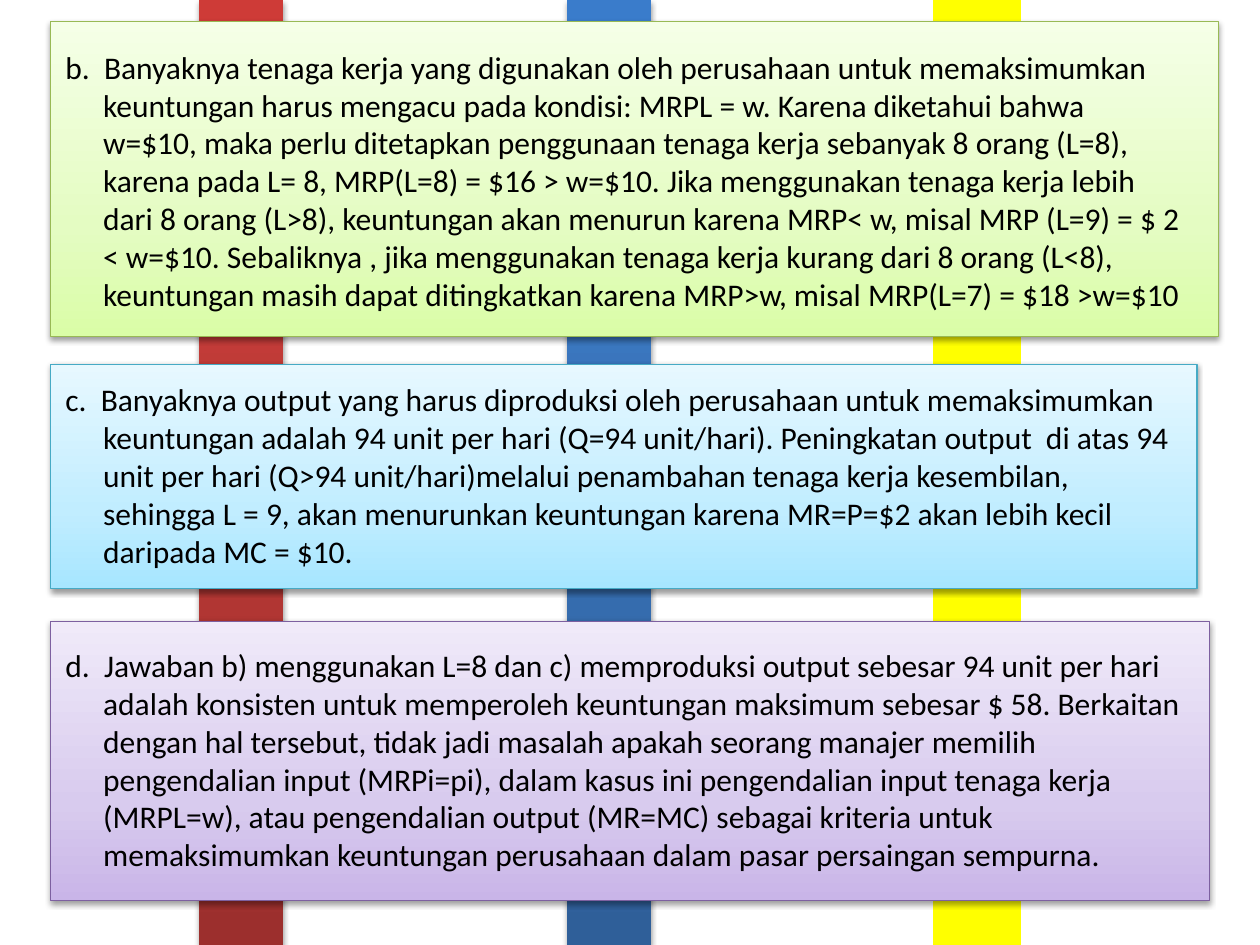
from lxml import etree
from pptx import Presentation
from pptx.dml.color import RGBColor
from pptx.enum.shapes import MSO_SHAPE
from pptx.enum.text import MSO_AUTO_SIZE
from pptx.oxml.ns import qn
from pptx.util import Inches, Pt

RECT = MSO_SHAPE.RECTANGLE
GROW = MSO_AUTO_SIZE.SHAPE_TO_FIT_TEXT
BLANK = 6

WIDTH, HEIGHT = 10, 7.5
STRIPE_LEFT, STRIPE_PITCH, STRIPE_WIDTH = 1.58, 2.92, 0.67
PANEL_LEFT = 0.4
TEXT_LEFT, TEXT_WIDTH = 0.42, 9.08
HANGING = 0.3


class Theme:
    FONT = {"name": "Calibri", "size": Pt(18)}
    TEXT = "000000"
    PANEL_LINE = 0.75
    STRIPE_LINE = 2
    # opacity in percent, distance in points
    STRIPE_SHADOW = (35, 1.8)
    PANEL_SHADOW = (38, 1.6)
    SHADOW_BLUR = 3.1
    STRIPE_STOPS = (0, 80, 100)
    PANEL_STOPS = (0, 35, 100)
    RED = ("9C2F2D", "CB3E3A", "CE3B37")
    BLUE = ("2F5F99", "3D7CC7", "3A7CCB")
    YELLOW = "FFFF00"
    GREEN_PANEL = ("DAFDA7", "E4FCC2", "F5FFE7")
    AQUA_PANEL = ("A7E6FF", "C1EDFF", "E7F8FF")
    PURPLE_PANEL = ("C9B5E8", "D8CBEE", "F0EAF9")
    GREEN_LINE, AQUA_LINE, PURPLE_LINE = "98B955", "46AAC5", "7D60A0"


# (panel top, width, height), (text top, height), gradient, line colour, answer
ANSWERS = [
    ((0.17, 9.27, 2.5), (0.33, 2.22), Theme.GREEN_PANEL, Theme.GREEN_LINE,
     "b.  Banyaknya tenaga kerja yang digunakan oleh perusahaan untuk "
     "memaksimumkan keuntungan harus mengacu pada kondisi: MRPL = w. Karena "
     "diketahui bahwa w=$10, maka perlu ditetapkan penggunaan tenaga kerja "
     "sebanyak 8 orang (L=8), karena pada L= 8, MRP(L=8) = $16 > w=$10. Jika "
     "menggunakan tenaga kerja lebih dari 8 orang (L>8), keuntungan akan "
     "menurun karena MRP< w, misal MRP (L=9) = $ 2 < w=$10. Sebaliknya , jika "
     "menggunakan tenaga kerja kurang dari 8 orang (L<8), keuntungan masih "
     "dapat ditingkatkan karena MRP>w, misal MRP(L=7) = $18 >w=$10"),
    ((2.89, 9.1, 1.78), (2.97, 1.62), Theme.AQUA_PANEL, Theme.AQUA_LINE,
     "c.  Banyaknya output yang harus diproduksi oleh perusahaan untuk "
     "memaksimumkan keuntungan adalah 94 unit per hari (Q=94 unit/hari). "
     "Peningkatan output  di atas 94 unit per hari (Q>94 unit/hari)melalui "
     "penambahan tenaga kerja kesembilan, sehingga L = 9, akan menurunkan "
     "keuntungan karena MR=P=$2 akan lebih kecil daripada MC = $10."),
    ((4.93, 9.2, 2.22), (5.08, 1.92), Theme.PURPLE_PANEL, Theme.PURPLE_LINE,
     "d.  Jawaban b) menggunakan L=8 dan c) memproduksi output sebesar 94 unit "
     "per hari adalah konsisten untuk memperoleh keuntungan maksimum sebesar "
     "$ 58. Berkaitan dengan hal tersebut, tidak jadi masalah apakah seorang "
     "manajer memilih pengendalian input (MRPi=pi), dalam kasus ini "
     "pengendalian input tenaga kerja (MRPL=w), atau pengendalian output "
     "(MR=MC) sebagai kriteria untuk memaksimumkan keuntungan perusahaan "
     "dalam pasar persaingan sempurna."),
]


def add_color(parent, color):
    return etree.SubElement(parent, qn("a:srgbClr"), val=color)


def fill_gradient(sp, stops, colors):
    """Fill upwards, the first colour at the bottom edge."""
    sp.fill.gradient()
    sp.fill.gradient_angle = 90
    stop_list = next(sp._element.spPr.iter(qn("a:gsLst")))
    for old in list(stop_list):
        stop_list.remove(old)
    for stop, color in zip(stops, colors):
        add_color(etree.SubElement(stop_list, qn("a:gs"), pos=str(stop * 1000)), color)


def add_shadow(sp, opacity, distance):
    effects = sp._element.spPr.find(qn("a:effectLst"))
    shadow = etree.SubElement(
        effects, qn("a:outerShdw"), blurRad=str(Pt(Theme.SHADOW_BLUR)),
        dist=str(Pt(distance)), dir="5400000", rotWithShape="0")
    etree.SubElement(add_color(shadow, Theme.TEXT), qn("a:alpha"),
                     val=str(opacity * 1000))


def add_rect(slide, box, line=None, line_width=0):
    sp = slide.shapes.add_shape(RECT, *map(Inches, box))
    sp.shadow.inherit = False
    if line:
        sp.line.color.rgb = RGBColor.from_string(line)
        sp.line.width = Pt(line_width)
    else:
        sp.line.fill.background()
    return sp


def add_stripe(slide, column, colors):
    """Draw a full-height stripe: one colour is flat, several are a gradient."""
    box = (STRIPE_LEFT + column * STRIPE_PITCH, 0, STRIPE_WIDTH, HEIGHT)
    if isinstance(colors, str):
        sp = add_rect(slide, box, colors, Theme.STRIPE_LINE)
        sp.fill.solid()
        sp.fill.fore_color.rgb = RGBColor.from_string(colors)
    else:
        sp = add_rect(slide, box)
        fill_gradient(sp, Theme.STRIPE_STOPS, colors)
        add_shadow(sp, *Theme.STRIPE_SHADOW)


def add_panel(slide, top, width, height, colors, line):
    sp = add_rect(slide, (PANEL_LEFT, top, width, height), line, Theme.PANEL_LINE)
    fill_gradient(sp, Theme.PANEL_STOPS, colors)
    add_shadow(sp, *Theme.PANEL_SHADOW)


def add_answer(slide, top, height, text):
    box = (TEXT_LEFT, top, TEXT_WIDTH, height)
    tf = slide.shapes.add_textbox(*map(Inches, box)).text_frame
    tf.word_wrap = True
    tf.auto_size = GROW
    p = tf.paragraphs[0]
    pPr = p._p.get_or_add_pPr()
    pPr.set("marL", str(Inches(HANGING)))
    pPr.set("indent", str(-Inches(HANGING)))
    r = p.add_run()
    r.text = text
    for name, value in Theme.FONT.items():
        setattr(r.font, name, value)
    r.font.color.rgb = RGBColor.from_string(Theme.TEXT)


def main():
    prs = Presentation()
    prs.slide_width, prs.slide_height = Inches(WIDTH), Inches(HEIGHT)
    slide = prs.slides.add_slide(prs.slide_layouts[BLANK])
    for column, colors in enumerate((Theme.RED, Theme.BLUE, Theme.YELLOW)):
        add_stripe(slide, column, colors)
    for panel, text_box, colors, line, text in ANSWERS:
        add_panel(slide, *panel, colors, line)
        add_answer(slide, *text_box, text)
    prs.save("out.pptx")


if __name__ == "__main__":
    main()
